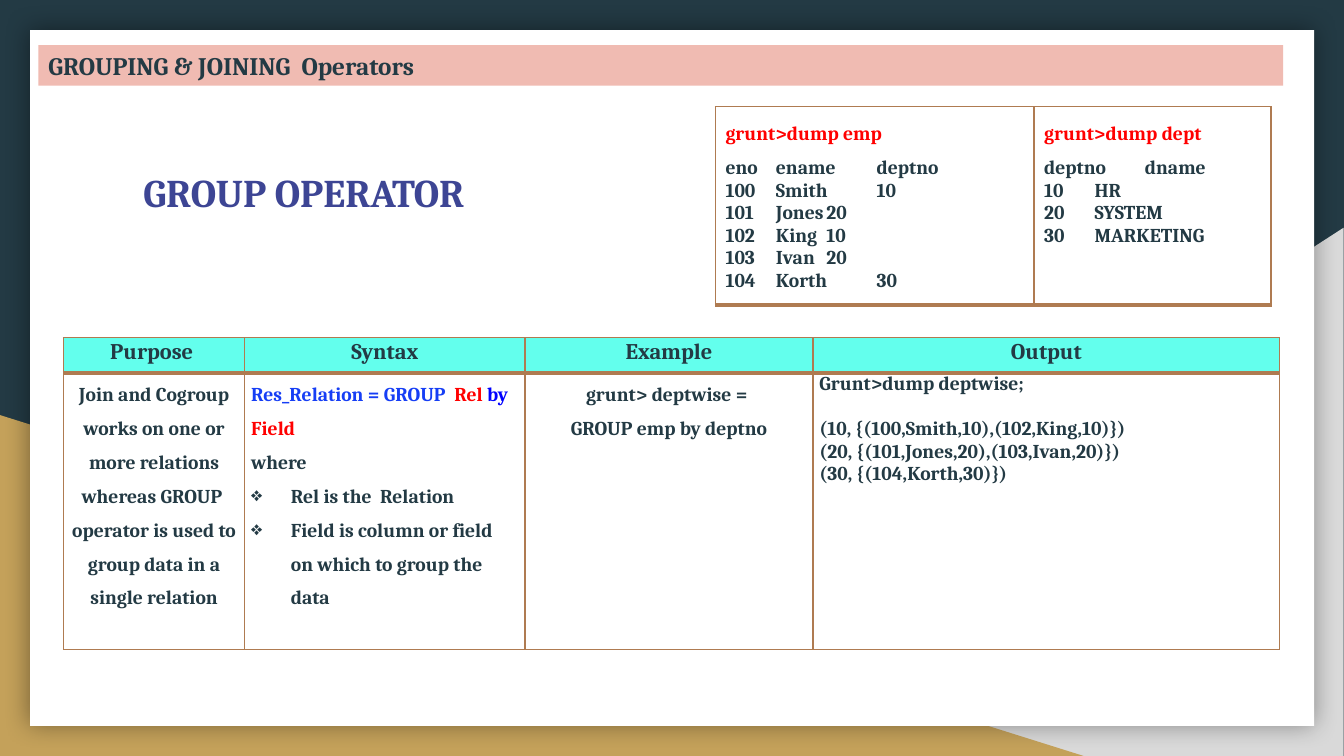
from lxml import etree
from pptx import Presentation
from pptx import util as u
from pptx.dml.color import RGBColor
from pptx.enum import shapes, text
from pptx.oxml import ns

COLOURS = {
    "dark": "233A44", "grey": "D9D9D9", "gold": "C4A15A", "white": "FFFFFF",
    "pink": "F0BBB2", "cyan": "63FFED", "brown": "AF7B51", "indigo": "3D4594",
    "red": "FF0000", "blue": "0000FF", "royal": "163EF5", "black": "000000",
}
FONT = "Cambria"
CENTER = text.PP_ALIGN.CENTER
SHAPE = shapes.MSO_SHAPE


def rgb(name):
    return RGBColor.from_string(COLOURS[name])


def add_solid_fill(parent, colour, alpha=None):
    holder = parent
    if not parent.tag.endswith("Shdw"):
        holder = etree.SubElement(parent, ns.qn("a:solidFill"))
    value = etree.SubElement(holder, ns.qn("a:srgbClr"), val=COLOURS[colour])
    if alpha:
        etree.SubElement(value, ns.qn("a:alpha"), val=str(alpha * 1000))


def insert_line(parent, tag, width, index=0):
    line = etree.Element(ns.qn(tag), w=str(u.Pt(width)))
    add_solid_fill(line, "brown")
    parent.insert(index, line)


def add_block(slide, kind, box, colour):
    shape = slide.shapes.add_shape(kind, *map(u.Cm, box))
    shape.shadow.inherit = False
    shape.fill.solid()
    shape.fill.fore_color.rgb = rgb(colour)
    shape.line.fill.background()
    return shape


def add_soft_shadow(shape, blur, alpha):
    effects = shape._element.spPr.find(ns.qn("a:effectLst"))
    shadow = etree.SubElement(effects, ns.qn("a:outerShdw"), blurRad=str(u.Pt(blur)),
                              dist="0", dir="0", algn="ctr", rotWithShape="0")
    add_solid_fill(shadow, "black", alpha)


def write(frame, content, size=14, colour="dark", align=text.PP_ALIGN.LEFT,
          spacing=1.0, after=0, bullet=None):
    """Add a paragraph; content is a string or a list of (words, colour)."""
    paragraph = frame.paragraphs[0]
    if paragraph.runs:
        paragraph = frame.add_paragraph()
    paragraph.alignment = align
    paragraph.line_spacing = spacing
    paragraph.space_after = u.Pt(after)
    if bullet:
        properties = paragraph._p.get_or_add_pPr()
        properties.set("marL", str(u.Cm(1)))
        properties.set("indent", str(-u.Cm(1)))
        etree.SubElement(properties, ns.qn("a:buChar"), char=bullet)
    parts = [(content, colour)] if isinstance(content, str) else content
    for words, part_colour in parts:
        run = paragraph.add_run()
        run.text = words
        run.font.name = FONT
        run.font.size = u.Pt(size)
        run.font.bold = True
        run.font.color.rgb = rgb(part_colour)
    return paragraph


def add_grid(slide, left, top, widths, heights):
    box = map(u.Cm, (left, top, sum(widths), sum(heights)))
    table = slide.shapes.add_table(len(heights), len(widths), *box).table
    table.first_row = table.horz_banding = False
    for column, width in zip(table.columns, widths):
        column.width = u.Cm(width)
    for row, height in zip(table.rows, heights):
        row.height = u.Cm(height)
    return table


def style_cell(cell, fill="white", top=1, bottom=1, tight=False):
    cell.fill.solid()
    cell.fill.fore_color.rgb = rgb(fill)
    if tight:
        cell.margin_left = cell.margin_right = u.Cm(0.16)
        cell.margin_top = cell.margin_bottom = 0
    borders = (("a:lnL", 1), ("a:lnR", 1), ("a:lnT", top), ("a:lnB", bottom))
    for index, (tag, width) in enumerate(borders):
        insert_line(cell._tc.get_or_add_tcPr(), tag, width, index)
    return cell.text_frame


def add_backdrop(slide):
    slide.background.fill.solid()
    slide.background.fill.fore_color.rgb = rgb("dark")
    corner = add_block(slide, SHAPE.RIGHT_TRIANGLE, (13.26, 5.74, 20.6, 13.31), "grey")
    corner._element.spPr.xfrm.set("flipH", "1")
    add_block(slide, SHAPE.RIGHT_TRIANGLE, (0, 10.46, 27.31, 8.59), "gold")
    card = add_block(slide, SHAPE.RECTANGLE, (0.76, 0.76, 32.36, 17.53), "white")
    add_soft_shadow(card, blur=18, alpha=40)


def add_titles(slide):
    bar = add_block(slide, SHAPE.RECTANGLE, (0.97, 1.14, 31.37, 1.02), "pink")
    bar.text_frame.word_wrap = True
    write(bar.text_frame, "GROUPING & JOINING  Operators", size=18)
    title = slide.shapes.add_textbox(*map(u.Cm, (3.12, 4.11, 9.07, 1.45)))
    title.text_frame.word_wrap = False
    paragraph = write(title.text_frame, "GROUP OPERATOR", size=28, colour="indigo",
                      align=CENTER)
    insert_line(paragraph.runs[0]._r.get_or_add_rPr(), "a:ln", 0.75)


def add_operator_table(slide):
    table = add_grid(slide, 1.6, 8.51, (4.57, 7.06, 7.26, 11.76), (0.89, 6.96))
    for column, heading in enumerate(("Purpose ", "Syntax", "Example", "Output")):
        frame = style_cell(table.cell(0, column), "cyan", bottom=3, tight=True)
        write(frame, heading, size=16, align=CENTER, spacing=1.07, after=8)
    purpose, syntax, example, output = (
        style_cell(table.cell(1, column), top=3, tight=True) for column in range(4))

    write(purpose, "Join and Cogroup works on one or more relations whereas GROUP  "
          "operator is used to group data in a single relation",
          align=CENTER, spacing=1.5)

    write(syntax, [("Res_Relation = GROUP  ", "royal"), ("Rel ", "red"),
                   ("by ", "blue"), ("Field", "red")], spacing=1.5)
    write(syntax, "where", spacing=1.5)
    for item in ("Rel is the  Relation",
                 "Field is column or field on which to group the data"):
        write(syntax, item, spacing=1.5, bullet="❖")

    for line in ("grunt> deptwise = ", "GROUP emp by deptno"):
        write(example, line, align=CENTER, spacing=1.5)

    write(output, "Grunt>dump deptwise;", after=16)
    for line in ("(10, {(100,Smith,10),(102,King,10)})",
                 "(20, {(101,Jones,20),(103,Ivan,20)})",
                 "(30, {(104,Korth,30)})"):
        write(output, line)


def add_relations_table(slide):
    relations = (
        ("grunt>dump emp", "eno\tename\tdeptno",
         ("100\tSmith\t10", "101\tJones\t20", "102\tKing\t10",
          "103\tIvan\t20", "104\tKorth\t30")),
        ("grunt>dump dept", "deptno\tdname",
         ("10\tHR", "20\tSYSTEM", "30\tMARKETING")),
    )
    table = add_grid(slide, 18.03, 2.69, (8.03, 5.97), (5,))
    for column, (command, heading, records) in enumerate(relations):
        frame = style_cell(table.cell(0, column), bottom=3)
        write(frame, command, colour="red", spacing=1.5)
        write(frame, heading, spacing=1.5)
        for record in records:
            write(frame, record)


def main():
    presentation = Presentation()
    presentation.slide_width = u.Cm(33.87)
    presentation.slide_height = u.Cm(19.05)
    slide = presentation.slides.add_slide(presentation.slide_layouts[6])
    add_backdrop(slide)
    add_titles(slide)
    add_operator_table(slide)
    add_relations_table(slide)
    presentation.save("out.pptx")


if __name__ == "__main__":
    main()
